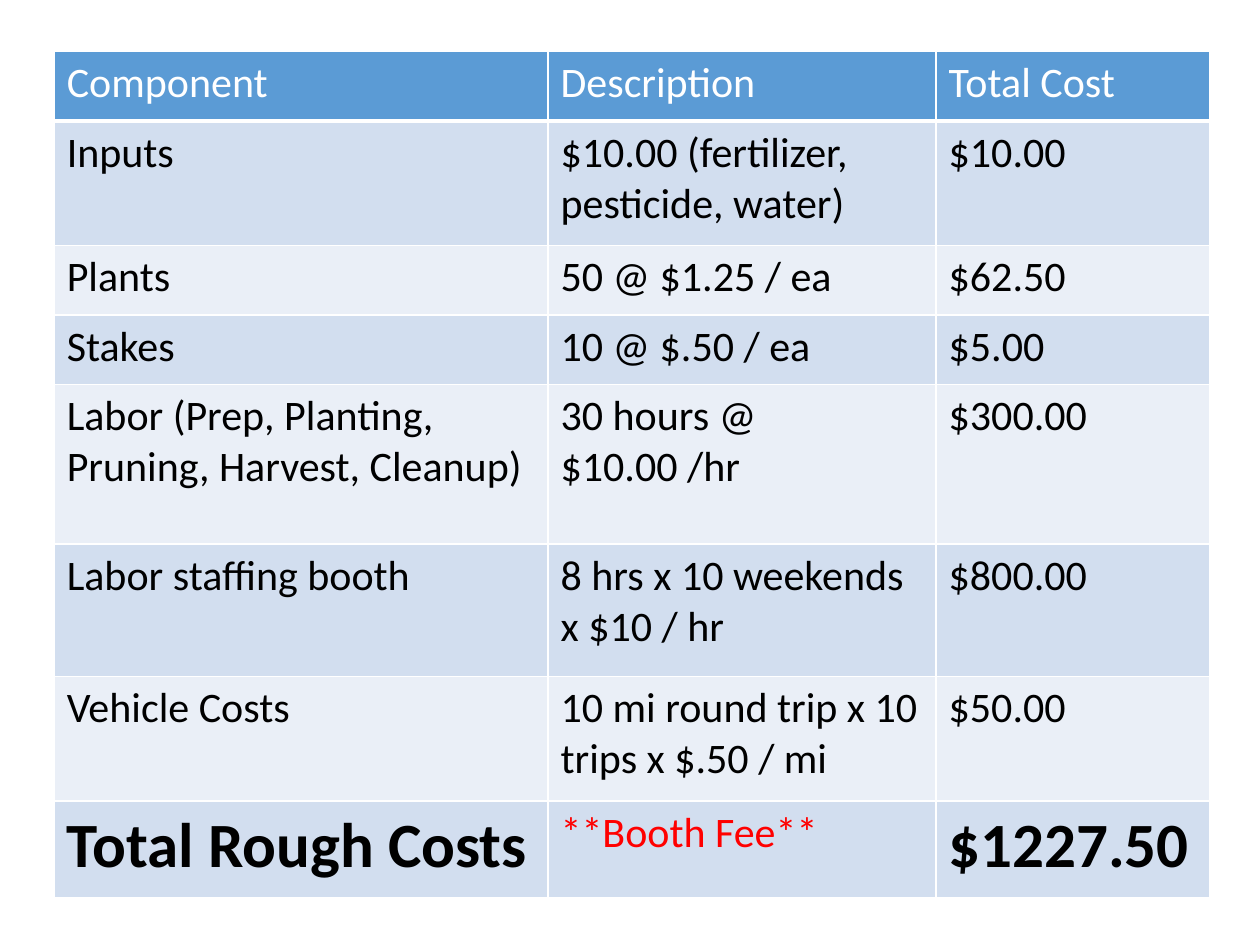
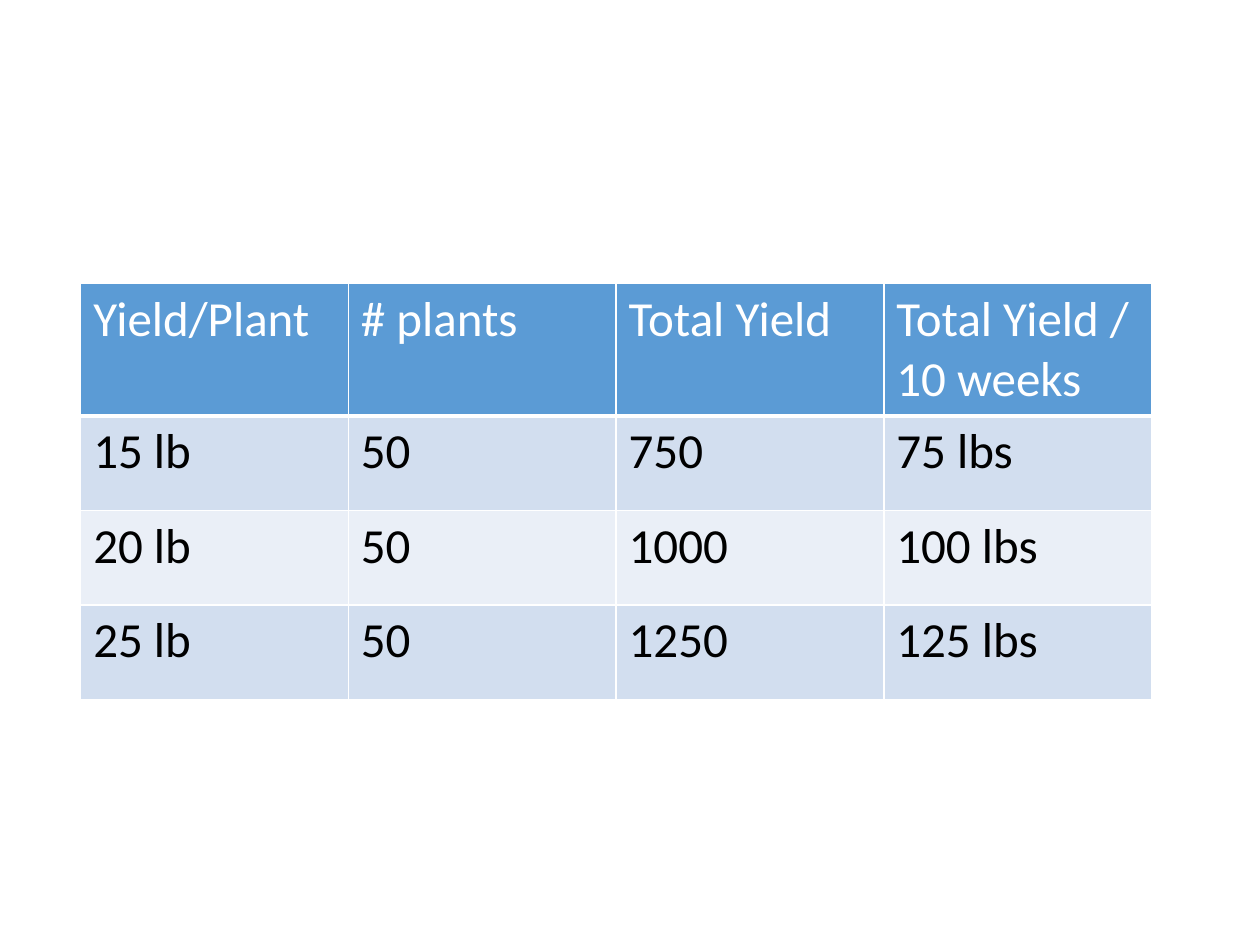
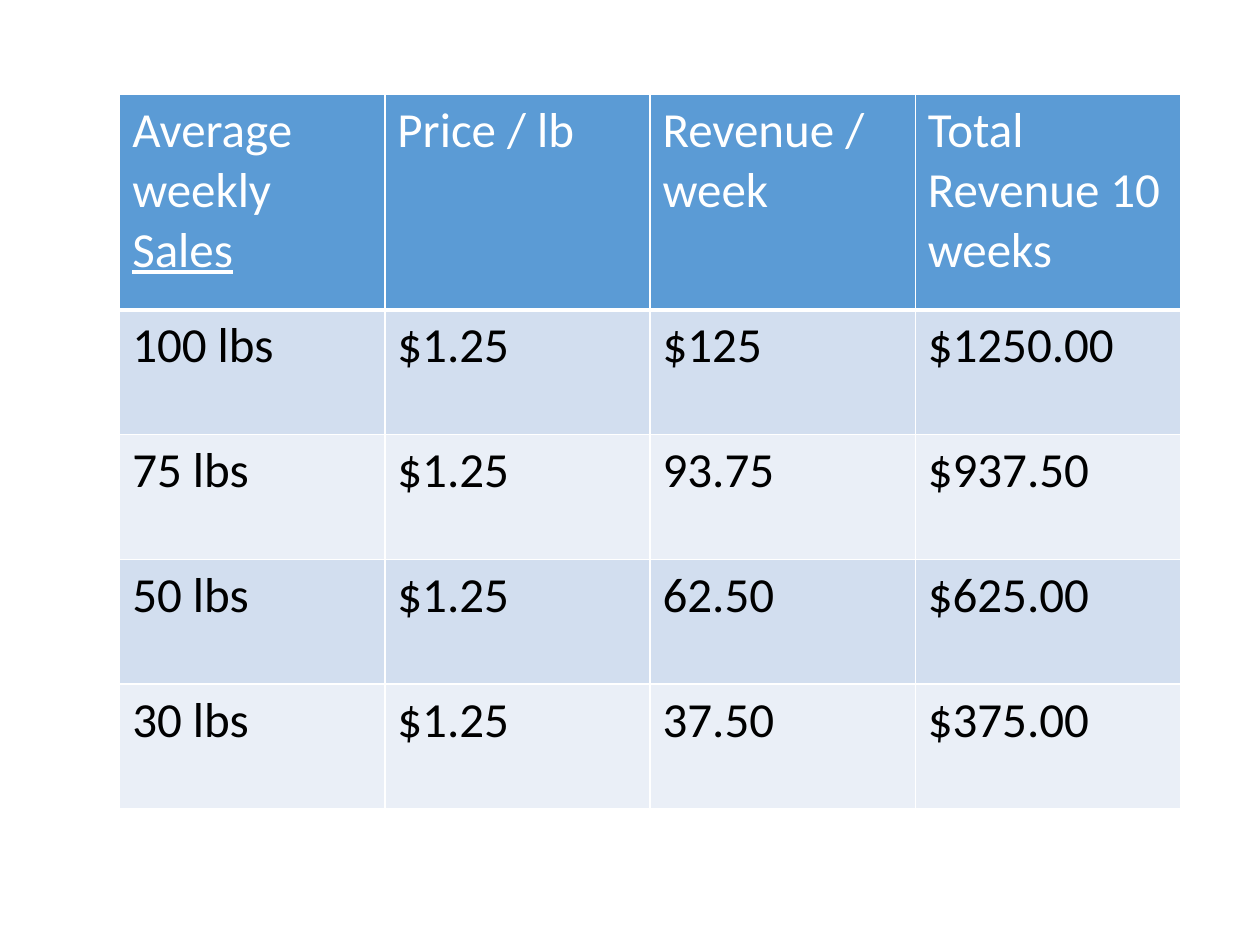
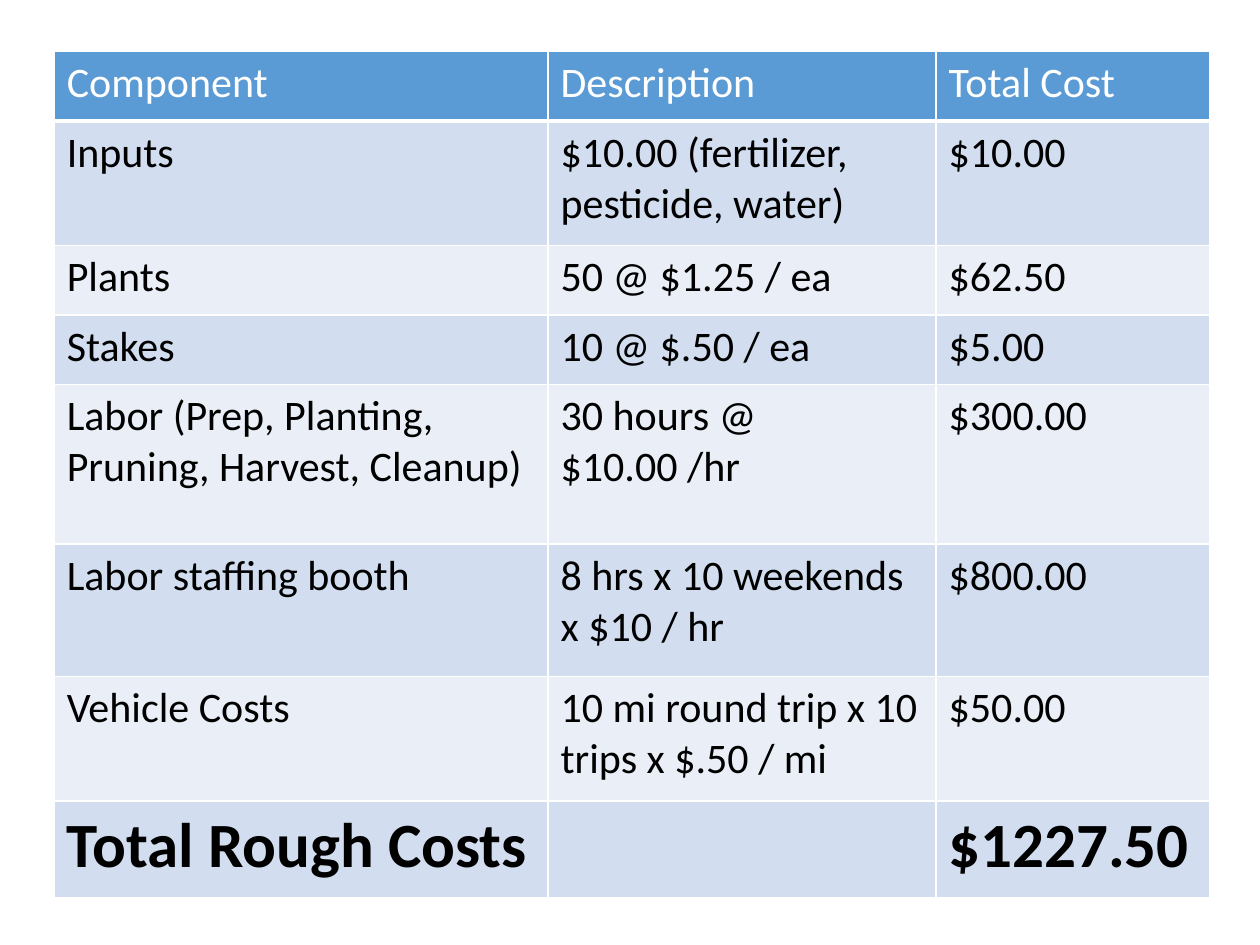
"""Builds four slides of market garden cost, yield and revenue tables."""
from pptx import Presentation
from pptx.dml.color import RGBColor
from pptx.oxml import parse_xml
from pptx.oxml.ns import nsdecls
from pptx.util import Inches, Pt

FONT = "Calibri"
WHITE, BLACK, RED = "FFFFFF", "000000", "FF0000"
HEADER, BANDS = "5B9BD5", ("D2DEEF", "EAEFF7")

TOTAL = {"size": 36, "bold": True}
COSTS = [
    ["Component", "Description", "Total Cost"],
    ["Inputs", "$10.00 (fertilizer, pesticide, water)", "$10.00"],
    ["Plants", "50 @ $1.25 / ea", "$62.50"],
    ["Stakes", "10 @ $.50 / ea", "$5.00"],
    ["Labor (Prep, Planting, Pruning, Harvest, Cleanup)", "30 hours @ $10.00 /hr", "$300.00"],
    ["Labor staffing booth", "8 hrs x 10 weekends x $10 / hr", "$800.00"],
    ["Vehicle Costs", "10 mi round trip x 10 trips x $.50 / mi", "$50.00"],
]
YIELDS = [
    ["Yield/Plant", "# plants", "Total Yield", "Total Yield / 10 weeks"],
    ["15 lb", "50", "750", "75 lbs"],
    ["20 lb", "50", "1000", "100 lbs"],
    ["25 lb", "50", "1250", "125 lbs"],
]
REVENUE = [
    [[("Average weekly ", {}), ("Sales", {"underline": True})],
     "Price / lb", "Revenue / week", "Total Revenue 10 weeks"],
    ["100 lbs", "$1.25", "$125", "$1250.00"],
    ["75 lbs", "$1.25", "93.75", "$937.50"],
    ["50 lbs", "$1.25", "62.50", "$625.00"],
    ["30 lbs", "$1.25", "37.50", "$375.00"],
]


def cost_slide(note):
    """Return the cost table with the given runs beside the total."""
    total = [[("Total Rough Costs", TOTAL)], note, [("$1227.50", TOTAL)]]
    return {"rows": COSTS + [total], "at": (0.43, 0.41, 9.17, 6.73), "size": 24,
            "widths": [3.92, 3.08, 2.17],
            "heights": [0.55, 0.99, 0.55, 0.55, 1.27, 1.05, 0.99, 0.77]}


SLIDES = [
    cost_slide([("**Booth Fee**", {"color": RED})]),
    {"rows": YIELDS, "at": (0.64, 2.25, 8.5, 3.28), "size": 28, "heights": [0.75] * 4},
    {"rows": REVENUE, "at": (0.95, 0.75, 8.42, 5.75), "size": 28,
     "heights": [1.71] + [0.99] * 4},
    cost_slide([]),
]


def rgb(color):
    """Turn a hex string into a colour."""
    return RGBColor.from_string(color)


def add_run(p, text, size, color, bold=False, underline=None):
    """Add one formatted run to a paragraph."""
    r = p.add_run()
    r.text = text
    font = r.font
    font.name, font.size, font.bold, font.underline = FONT, Pt(size), bold, underline
    font.color.rgb = rgb(color)


def add_border(cell, side, width):
    """Draw a white line on one side of a cell."""
    cell._tc.get_or_add_tcPr().append(parse_xml(
        f'<a:ln{side} {nsdecls("a")} w="{Pt(width)}"><a:solidFill>'
        f'<a:srgbClr val="{WHITE}"/></a:solidFill></a:ln{side}>'))


def fill_cell(cell, content, is_header, band, size):
    """Set the text, borders and fill of a cell."""
    runs = [(content, {})] if isinstance(content, str) else content
    base = {"size": size, "color": WHITE if is_header else BLACK}
    p = cell.text_frame.paragraphs[0]
    for text, style in runs:
        add_run(p, text, **{**base, **style})
    if not runs:
        p.font.size = Pt(size)
    for side in "LRTB":
        add_border(cell, side, 3 if is_header and side == "B" else 1)
    cell.fill.solid()
    cell.fill.fore_color.rgb = rgb(HEADER if is_header else band)


def add_grid(s, rows, at, size, heights, widths=None):
    """Add a banded table; columns are equal unless widths are given."""
    sp = s.shapes.add_table(len(rows), len(rows[0]), *map(Inches, at))
    table = sp.table
    for column, width in zip(table.columns, widths or []):
        column.width = Inches(width)
    for row, height in zip(table.rows, heights):
        row.height = Inches(height)
    for i, row in enumerate(rows):
        for j, content in enumerate(row):
            fill_cell(table.cell(i, j), content, i == 0, BANDS[(i - 1) % 2], size)


def main():
    """Build and save the deck."""
    prs = Presentation()
    prs.slide_width, prs.slide_height = Inches(10), Inches(7.5)
    for slide in SLIDES:
        add_grid(prs.slides.add_slide(prs.slide_layouts[6]), **slide)
    prs.save("out.pptx")


if __name__ == "__main__":
    main()
